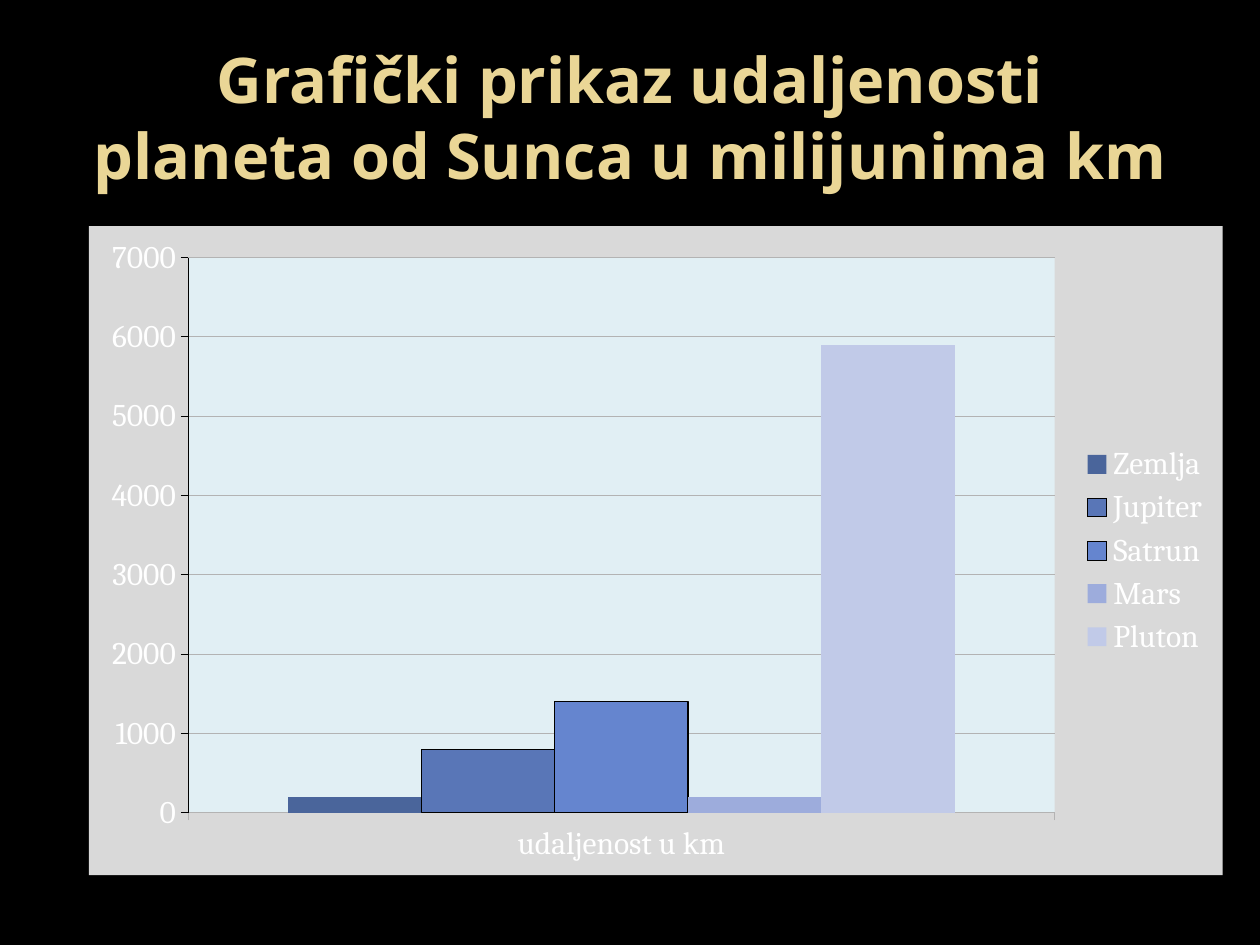
from pptx import Presentation
from pptx.chart.data import CategoryChartData as ChartData
from pptx.dml.color import RGBColor as RGB
from pptx.enum.chart import XL_CHART_TYPE as Kind
from pptx.enum.chart import XL_LEGEND_POSITION as Place
from pptx.enum.chart import XL_TICK_MARK as Tick
from pptx.enum.text import MSO_ANCHOR as Anchor
from pptx.enum.text import PP_ALIGN as Align
from pptx.oxml import parse_xml
from pptx.util import Cm, Pt

BLACK = RGB(0x00, 0x00, 0x00)
WHITE = RGB(0xFF, 0xFF, 0xFF)
GOLD = RGB(0xEA, 0xD6, 0x96)
GREY = RGB(0xD9, 0xD9, 0xD9)
PALE = RGB(0xE1, 0xEF, 0xF4)
RULE = RGB(0xB3, 0xB3, 0xB3)

TITLE = ["Grafički prikaz udaljenosti", "planeta od Sunca u milijunima km"]
# name, distance, colour, outlined
PLANETS = [
    ("Zemlja", 200, RGB(0x4A, 0x65, 0x9B), False),
    ("Jupiter", 800, RGB(0x59, 0x76, 0xB7), True),
    ("Satrun", 1400, RGB(0x65, 0x85, 0xCF), True),
    ("Mars", 200, RGB(0x9D, 0xAC, 0xDC), False),
    ("Pluton", 5900, RGB(0xC1, 0xCA, 0xE8), False),
]
NS = ('xmlns:c="http://schemas.openxmlformats.org/drawingml/2006/chart" '
      'xmlns:a="http://schemas.openxmlformats.org/drawingml/2006/main"')


def area(color):
    """Return chart shape properties: a plain fill without a line."""
    return parse_xml(
        f'<c:spPr {NS}><a:solidFill><a:srgbClr val="{color}"/></a:solidFill>'
        '<a:ln><a:noFill/></a:ln></c:spPr>')


def stroke(line, color):
    line.color.rgb = color
    line.width = Pt(0.75)


def add_title(slide):
    box = slide.shapes.add_textbox(Cm(1.27), Cm(0.76), Cm(22.86), Cm(3.18))
    frame = box.text_frame
    frame.word_wrap = True
    frame.vertical_anchor = Anchor.MIDDLE
    para = frame.paragraphs[0]
    para.alignment = Align.CENTER
    for i, text in enumerate(TITLE):
        if i:
            para.add_line_break()
        run = para.add_run()
        run.text = text
        font = run.font
        font.name, font.size, font.bold = "Noto Sans", Pt(36), True
        font.color.rgb = GOLD


def style_bars(plot):
    plot.gap_width = 150
    plot.overlap = 0
    plot.vary_by_categories = False
    for bar, (_, _, color, lined) in zip(plot.series, PLANETS):
        bar.format.fill.solid()
        bar.format.fill.fore_color.rgb = color
        if lined:
            stroke(bar.format.line, BLACK)
        else:
            bar.format.line.fill.background()


def style_axes(chart):
    base, scale = chart.category_axis, chart.value_axis
    for axis, color in ((base, RULE), (scale, BLACK)):
        axis.major_tick_mark = Tick.OUTSIDE
        axis.minor_tick_mark = Tick.NONE
        stroke(axis.format.line, color)
    scale.minimum_scale, scale.maximum_scale = 0, 7000
    scale.major_unit = 1000
    scale.has_major_gridlines = True
    stroke(scale.major_gridlines.format.line, RULE)


def add_bars(slide):
    data = ChartData()
    data.categories = ["udaljenost u km"]
    for name, dist, _, _ in PLANETS:
        data.add_series(name, [dist])
    chart = slide.shapes.add_chart(
        Kind.COLUMN_CLUSTERED, Cm(1.79), Cm(4.56), Cm(22.86), Cm(13.08),
        data).chart
    chart.has_title = False
    chart.font.name, chart.font.size = "Cambria", Pt(18)
    chart.font.color.rgb = WHITE
    chart.has_legend = True
    chart.legend.position = Place.RIGHT
    chart.legend.include_in_layout = False
    style_bars(chart.plots[0])
    style_axes(chart)
    root = chart.element.chart
    root.addnext(area(GREY))
    root.plotArea.append(area(PALE))


def main():
    deck = Presentation()
    deck.slide_width, deck.slide_height = Cm(25.4), Cm(19.05)
    slide = deck.slides.add_slide(deck.slide_layouts[6])
    slide.background.fill.solid()
    slide.background.fill.fore_color.rgb = BLACK
    add_title(slide)
    add_bars(slide)
    deck.save("out.pptx")


if __name__ == "__main__":
    main()
